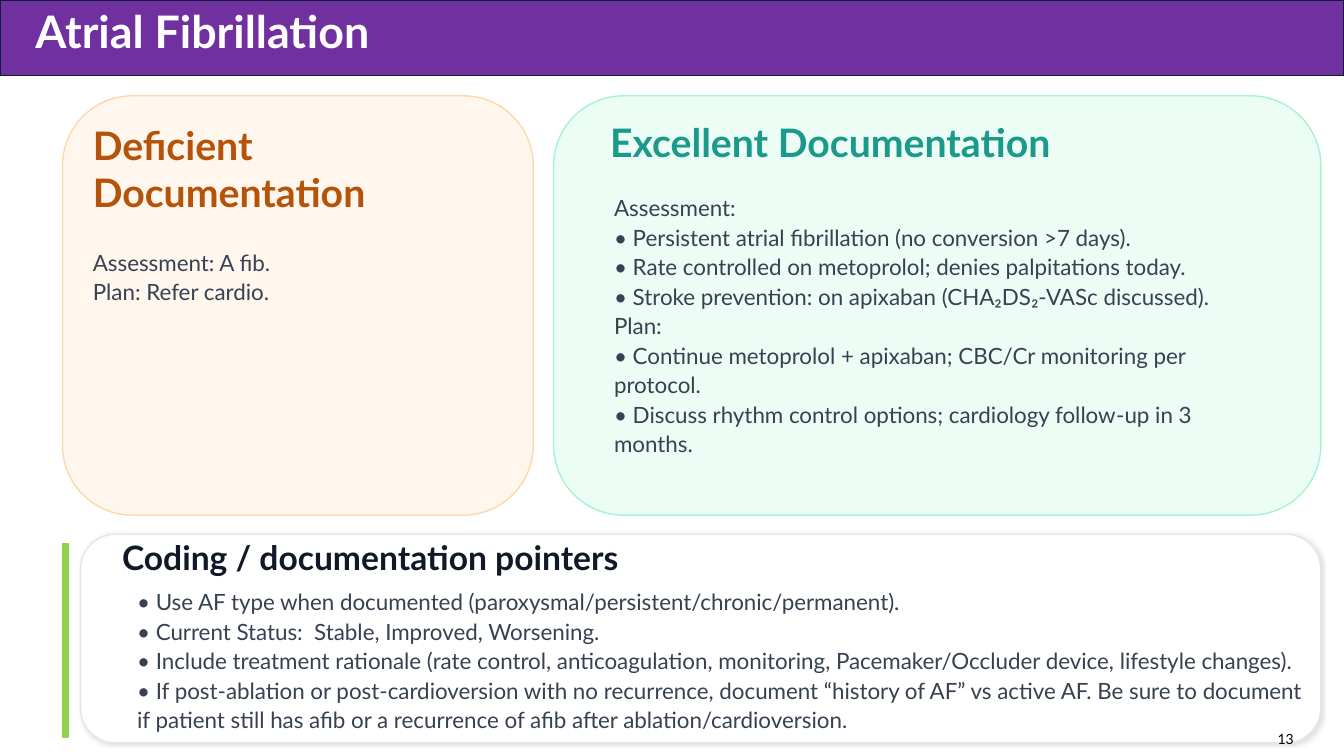
from lxml import etree
from pptx import Presentation
from pptx import util as u
from pptx.dml.color import RGBColor
from pptx.enum import shapes, text
from pptx.oxml.ns import qn

THEME = {
    "font": "Lato",
    "bar": "7030A0", "navy": "0B1F3A", "white": "FFFFFF", "black": "000000",
    "mint": "ECFDF5", "mint_edge": "A7F3D0", "teal": "1B998B",
    "cream": "FFF7ED", "cream_edge": "FED7AA", "rust": "B45309",
    "edge": "E5E7EB", "green": "92D050", "ink": "111827", "body": "374151",
    "title": 32, "card": 28, "head": 24, "list": 16, "page": 10,
}
RECT = shapes.MSO_SHAPE.RECTANGLE
ROUND = shapes.MSO_SHAPE.ROUNDED_RECTANGLE
MID, TOP = text.MSO_ANCHOR.MIDDLE, text.MSO_ANCHOR.TOP
LEFT, RIGHT = text.PP_ALIGN.LEFT, text.PP_ALIGN.RIGHT

deck = Presentation()
deck.slide_width, deck.slide_height = u.Inches(13.33), u.Inches(7.5)
slide = deck.slides.add_slide(deck.slide_layouts.get_by_name("Comparison"))
tree = slide.shapes


def area(x, y, w, h):
    """Turn percentages of the slide's width and height into lengths."""
    wide, high = deck.slide_width / 100, deck.slide_height / 100
    return [u.Emu(round(n)) for n in (x * wide, y * high, w * wide, h * high)]


def write(shape, lines, size, color, bold=False, anchor=MID, align=LEFT, start=0):
    """Style the paragraphs from index start on, one for each line."""
    frame = shape.text_frame
    frame.word_wrap = True
    frame.auto_size = text.MSO_AUTO_SIZE.NONE
    frame.vertical_anchor = anchor
    for i, line in enumerate(lines, start):
        para = frame.add_paragraph() if i else frame.paragraphs[0]
        para.text = line
        para.alignment = align
        para.space_before = u.Pt(0)
        para.line_spacing = 1.1 if size == THEME["list"] else 1.0
        props = para._p.get_or_add_pPr()
        props.set("marL", "0")
        props.set("indent", "0")
        etree.SubElement(props, qn("a:buNone"))
        font = para.font
        font.name, font.size, font.bold = THEME["font"], u.Pt(THEME[size] if size in THEME else size), bold
        font.color.rgb = RGBColor.from_string(THEME[color])
        if size == "list":
            para.line_spacing = 1.1


# Panels, from back to front
panels = {}
for name, kind, box, fill, line in [
    ("bar", RECT, (0, 0, 100, 10), "bar", "navy"),
    ("good", ROUND, (41.19, 12.67, 57.09, 55.47), "mint", "mint_edge"),
    ("tips", ROUND, (6, 70.67, 92.27, 27.6), "white", "edge"),
    ("stripe", RECT, (4.65, 71.87, 0.45, 25.6), "green", "green"),
    ("poor", ROUND, (4.65, 12.67, 35.03, 55.47), "cream", "cream_edge"),
]:
    panel = tree.add_shape(kind, *area(*box))
    panel.shadow.inherit = False
    panel.fill.solid()
    panel.fill.fore_color.rgb = RGBColor.from_string(THEME[fill])
    panel.line.color.rgb = RGBColor.from_string(THEME[line])
    panel.line.width = u.Pt(1)
    panels[name] = panel

glow = panels["tips"]._element.spPr.find(qn("a:effectLst"))
cast = etree.SubElement(glow, qn("a:outerShdw"), blurRad=str(u.Pt(2)),
                        dist=str(u.Pt(1)), dir=str(45 * 60000))
tint = etree.SubElement(cast, qn("a:srgbClr"), val=THEME["black"])
etree.SubElement(tint, qn("a:alpha"), val="12000")

# Deficient card
poor = panels["poor"]
write(poor, ["Deficient Documentation"], "card", "rust", True, TOP)
write(poor, ["Assessment: A fib.", "Plan: Refer cardio."], "list", "body", anchor=TOP, start=1)
poor.text_frame.paragraphs[1].space_before = u.Pt(22)

# Title, headings and lists
good = [
    "Assessment:",
    "• Persistent atrial fibrillation (no conversion >7 days).",
    "• Rate controlled on metoprolol; denies palpitations today.",
    "• Stroke prevention: on apixaban (CHA₂DS₂‑VASc discussed).",
    "Plan:",
    "• Continue metoprolol + apixaban; CBC/Cr monitoring per protocol.",
    "• Discuss rhythm control options; cardiology follow-up in 3 months.",
]
tips = [
    "• Use AF type when documented (paroxysmal/persistent/chronic/permanent).",
    "• Current Status:  Stable, Improved, Worsening.",
    "• Include treatment rationale (rate control, anticoagulation, monitoring, "
    "Pacemaker/Occluder device, lifestyle changes).",
    "• If post-ablation or post-cardioversion with no recurrence, document “history of AF” "
    "vs active AF. Be sure to document if patient still has afib or a recurrence of afib "
    "after ablation/cardioversion.",
]
for slot, box, lines, size, color, bold, anchor in [
    (0, (1.88, 1.87, 91, 4.27), ["Atrial Fibrillation"], "title", "white", True, MID),
    (1, (44.64, 16, 35.86, 5.6), ["Excellent Documentation"], "card", "teal", True, MID),
    (2, (44.94, 24.67, 49.06, 29.33), good, "list", "body", False, TOP),
    (3, (8.33, 71.87, 92.27, 3.73), ["Coding / documentation pointers"], "head", "ink", True, MID),
    (4, (9.45, 76.8, 88.82, 17.07), tips, "list", "body", False, TOP),
]:
    holder = slide.placeholders[slot]
    holder.left, holder.top, holder.width, holder.height = area(*box)
    write(holder, lines, size, color, bold, anchor)
    panels["poor"]._element.getparent().append(holder._element)

page = tree.add_textbox(*area(94, 96.27, 3, 2.93))
write(page, ["13"], "page", "black", align=RIGHT)

deck.save("out.pptx")
